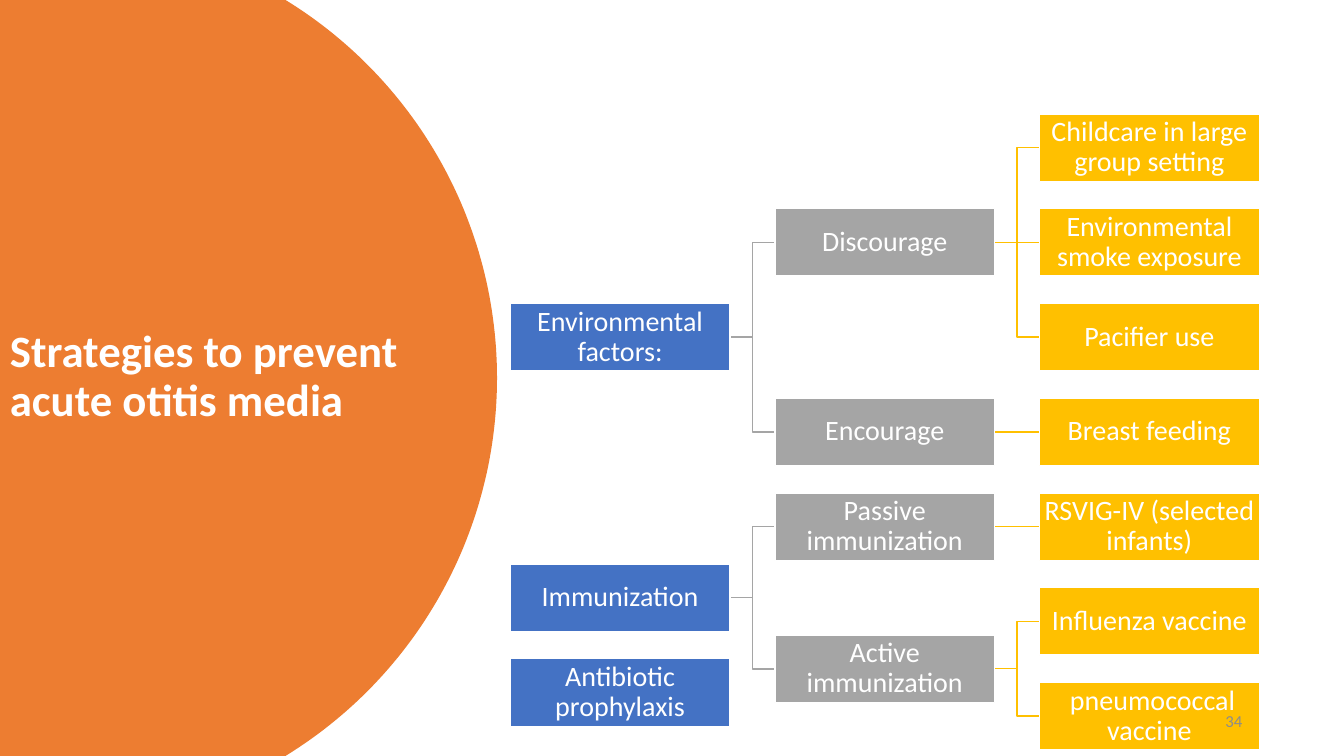
from math import asin, cos, sin

from lxml.etree import SubElement
from pptx import Presentation
from pptx.dml.color import RGBColor
from pptx.enum.shapes import MSO_CONNECTOR, MSO_SHAPE
from pptx.enum.text import MSO_ANCHOR, PP_ALIGN
from pptx.oxml.ns import qn
from pptx.util import Inches, Pt

COLORS = {
    "orange": "ED7D31",
    "blue": "4472C4",
    "gray": "A5A5A5",
    "gold": "FFC000",
    "white": "FFFFFF",
    "number": "8C8C8C",
}
LEVELS = ["blue", "gray", "gold"]
BOX_W, BOX_H = 2.18, 0.67
COL_STEP, ROW_STEP = 2.625, 0.94

STRATEGIES = [
    ("Environmental factors:", [
        ("Discourage", [
            ("Childcare in large group setting", []),
            ("Environmental smoke exposure", []),
            ("Pacifier use", []),
        ]),
        ("Encourage", [("Breast feeding", [])]),
    ]),
    ("Immunization", [
        ("Passive immunization", [("RSVIG-IV (selected infants)", [])]),
        ("Active immunization", [
            ("Influenza vaccine", []),
            (" pneumococcal vaccine", []),
        ]),
    ]),
    ("Antibiotic prophylaxis", []),
]


def rgb(name):
    return RGBColor.from_string(COLORS[name])


def write(sp, text, size=20, color="white", bold=False, align=PP_ALIGN.LEFT,
          spacing=None, inset=None):
    tf = sp.text_frame
    tf.word_wrap = True
    tf.vertical_anchor = MSO_ANCHOR.MIDDLE
    if inset is not None:
        tf.margin_left = tf.margin_right = Inches(inset)
        tf.margin_top = tf.margin_bottom = Inches(inset)
    p = tf.paragraphs[0]
    p.alignment = align
    p.line_spacing = spacing
    r = p.add_run()
    r.text = text
    r.font.name = "Calibri"
    r.font.size = Pt(size)
    r.font.bold = bold
    r.font.color.rgb = rgb(color)


def add_title_panel(s, left, top, width, height):
    radius = 4.4
    cx, cy = left + width - radius, top + height / 2
    half = asin(height / 2 / radius)
    steps = 120
    angles = [half * (2 * i / steps - 1) for i in range(steps + 1)]
    arc = [(cx + radius * cos(a), cy + radius * sin(a)) for a in angles]
    outline = s.shapes.build_freeform(Inches(left), Inches(top))
    points = arc + [(left, top + height)]
    outline.add_line_segments([(Inches(x), Inches(y)) for x, y in points], close=True)
    panel = outline.convert_to_shape()
    panel.shadow.inherit = False
    panel.fill.solid()
    panel.fill.fore_color.rgb = rgb("orange")
    panel.line.fill.background()

    title = s.shapes.add_textbox(Inches(left), Inches(top + 0.7), Inches(4.14), Inches(6.09))
    write(title, "Strategies to prevent acute otitis media", size=32, bold=True, spacing=0.9)


def place(node, level, last_rows, boxes, links):
    text, children = node
    rows = [place(child, level + 1, last_rows, boxes, links) for child in children]
    row = (rows[0] + rows[-1]) / 2 if rows else last_rows[level] + 1
    last_rows[level] = row
    boxes.append((text, level, row))
    links.extend((level, row, child_row) for child_row in rows)
    return row


def add_link(s, x1, y1, x2, y2, color):
    kind = MSO_CONNECTOR.STRAIGHT if y1 == y2 else MSO_CONNECTOR.ELBOW
    link = s.shapes.add_connector(kind, Inches(x1), Inches(y1), Inches(x2), Inches(y2))
    link.line.color.rgb = rgb(color)
    link.line.width = Pt(1)
    SubElement(link._element.spPr, qn("a:effectLst"))


def add_box(s, text, left, top, color):
    sp = s.shapes.add_shape(MSO_SHAPE.RECTANGLE, Inches(left), Inches(top),
                            Inches(BOX_W), Inches(BOX_H))
    sp.shadow.inherit = False
    sp.fill.solid()
    sp.fill.fore_color.rgb = rgb(color)
    sp.line.color.rgb = rgb("white")
    sp.line.width = Pt(1)
    write(sp, text, align=PP_ALIGN.CENTER, spacing=0.9, inset=0.01)


def add_tree(s, left, top):
    boxes, links = [], []
    last_rows = [-1] * len(LEVELS)
    for node in STRATEGIES:
        place(node, 0, last_rows, boxes, links)
    middle = top + BOX_H / 2
    for level, row, child_row in links:
        x = left + level * COL_STEP
        add_link(s, x + BOX_W, middle + row * ROW_STEP,
                 x + COL_STEP, middle + child_row * ROW_STEP, LEVELS[level + 1])
    for text, level, row in boxes:
        add_box(s, text, left + level * COL_STEP, top + row * ROW_STEP, LEVELS[level])


def add_slide_number(s, left, top, width, height):
    sp = s.shapes.add_textbox(Inches(left), Inches(top), Inches(width), Inches(height))
    write(sp, "34", size=12, color="number", align=PP_ALIGN.RIGHT)


def main():
    prs = Presentation()
    prs.slide_width, prs.slide_height = Inches(13.33), Inches(7.5)
    s = prs.slides.add_slide(prs.slide_layouts[6])
    add_title_panel(s, 0, 0, 4.93, 7.5)
    add_tree(s, 5.06, 1.13)
    add_slide_number(s, 9.42, 6.95, 3, 0.4)
    prs.save("out.pptx")


if __name__ == "__main__":
    main()
